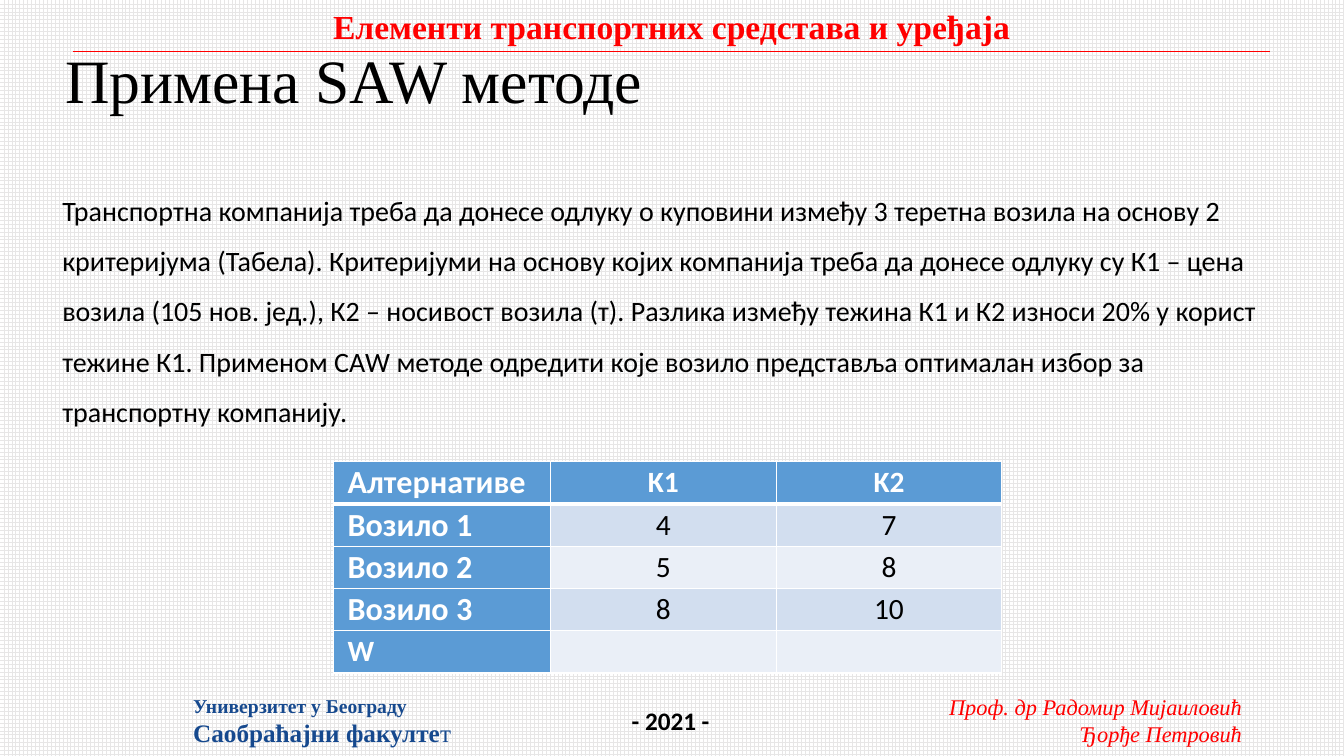
from dataclasses import dataclass

from lxml import etree
from pptx import Presentation
from pptx import util as u
from pptx.dml import color
from pptx.enum import dml, shapes, text
from pptx.oxml import ns

Cm = u.Cm
Align = text.PP_ALIGN


@dataclass(frozen=True)
class Theme:
    """Colours, fonts and type sizes of the slide."""
    red: str = "FF0000"
    navy: str = "16498E"
    black: str = "000000"
    white: str = "FFFFFF"
    grid: str = "E7E6E6"
    header: str = "5B9BD5"
    bands: tuple = ("D2DEEF", "EAEFF7")
    serif: str = "Times New Roman"
    sans: str = "Calibri"
    title: int = 44
    course: int = 24
    label: int = 23
    value: int = 21
    body: int = 20
    footer: int = 18
    lecturer: int = 16
    university: int = 14


THEME = Theme()
PROBLEM = (
    "Транспортна компанија треба да донесе одлуку о куповини између 3 теретна возила на основу 2 "
    "критеријума (Табела). Критеријуми на основу којих компанија треба да донесе одлуку су К1 – цена "
    "возила (105 нов. јед.), К2 – носивост возила (т). Разлика између тежина К1 и К2 износи 20% у корист "
    "тежине К1. Применом САW методе одредити које возило представља оптималан избор за "
    "транспортну компанију."
)
ALTERNATIVES = [
    ("Алтернативе", "K1", "K2"),
    ("Возило 1", "4", "7"),
    ("Возило 2", "5", "8"),
    ("Возило 3", "8", "10"),
    ("W", "", ""),
]


def rgb(value):
    """Turn a hex string into a colour."""
    return color.RGBColor.from_string(value)


def write(paragraph, words, *, size, font=THEME.sans, ink=THEME.black, bold=False,
          italic=False, align=Align.LEFT, spacing=None):
    """Add one formatted run to a paragraph."""
    paragraph.alignment = align
    if spacing:
        paragraph.line_spacing = spacing
    run = paragraph.add_run()
    run.text = words
    run.font.size, run.font.name = u.Pt(size), font
    run.font.bold, run.font.italic = bold, italic
    run.font.color.rgb = rgb(ink)


def text_frame(slide, box, wrap=False):
    """Add a text box and return its frame."""
    frame = slide.shapes.add_textbox(*map(Cm, box)).text_frame
    frame.word_wrap = wrap
    frame.auto_size = text.MSO_AUTO_SIZE.NONE if wrap else text.MSO_AUTO_SIZE.SHAPE_TO_FIT_TEXT
    return frame


def draw_background(slide):
    """Cover the slide with a pale grid."""
    fill = slide.background.fill
    fill.patterned()
    fill.pattern = dml.MSO_PATTERN.LARGE_GRID
    fill.fore_color.rgb = rgb(THEME.grid)
    fill.back_color.rgb = rgb(THEME.white)


def draw_header(slide, box):
    """Place the course name over a thin rule."""
    left, top, width, height = box
    rule_y = Cm(top + height)
    rule = slide.shapes.add_connector(shapes.MSO_CONNECTOR.STRAIGHT,
                                      Cm(left), rule_y, Cm(left + width), rule_y)
    rule.line.color.rgb = rgb(THEME.red)
    rule.line.width = u.Pt(0.5)
    etree.SubElement(rule._element.spPr, ns.qn("a:effectLst"))
    course = text_frame(slide, (left + 6.22, top, 17.75, height))
    write(course.paragraphs[0], "Елементи транспортних средстава и уређаја", size=THEME.course,
          font=THEME.serif, ink=THEME.red, bold=True, align=Align.CENTER)


def draw_footer(slide, box):
    """Place faculty, year and lecturers in a row."""
    left, top, width, height = box
    lecturers = text_frame(slide, (left + width - 8.13, top, 8.13, height))
    for paragraph, name in ((lecturers.paragraphs[0], "Проф. др Радомир Мијаиловић"),
                            (lecturers.add_paragraph(), "Ђорђе Петровић")):
        write(paragraph, name, size=THEME.lecturer, font=THEME.serif, ink=THEME.red,
              italic=True, align=Align.RIGHT)
    year = text_frame(slide, (left + 11.05, top + 0.3, 2.49, 1.02))
    write(year.paragraphs[0], "- 2021 -", size=THEME.footer, bold=True)
    faculty = text_frame(slide, (left, top, 7.09, height))
    school = {"font": THEME.serif, "ink": THEME.navy}
    write(faculty.paragraphs[0], "Универзитет у Београду", size=THEME.university, bold=True, **school)
    department = faculty.add_paragraph()
    write(department, "Саобраћајни факулте", size=THEME.footer, bold=True, **school)
    write(department, "т", size=THEME.footer, **school)


def draw_passage(slide, box, words, **style):
    """Place one wrapped paragraph in its box."""
    write(text_frame(slide, box, wrap=True).paragraphs[0], words, **style)


def set_borders(cell, row):
    """Draw white cell edges, thick beneath the header row."""
    widths = {"lnL": 1, "lnR": 1, "lnT": 3 if row == 1 else 1, "lnB": 3 if row == 0 else 1}
    properties = cell._tc.get_or_add_tcPr()
    for place, (side, width) in enumerate(widths.items()):
        edge = etree.Element(ns.qn(f"a:{side}"), w=str(u.Pt(width)))
        fill = etree.SubElement(edge, ns.qn("a:solidFill"))
        etree.SubElement(fill, ns.qn("a:srgbClr"), val=THEME.white)
        properties.insert(place, edge)


def set_hanging_indent(paragraph, indent):
    """Hang the first line and put a tab stop at the indent."""
    properties = paragraph._p.get_or_add_pPr()
    properties.set("marL", str(indent))
    properties.set("indent", str(-indent))
    tabs = etree.SubElement(properties, ns.qn("a:tabLst"))
    etree.SubElement(tabs, ns.qn("a:tab"), pos=str(indent), algn="l")


def draw_alternatives(slide, box, rows):
    """Build the table of vehicles and criteria."""
    left, top, width, height = box
    label_width = 5.46
    table = slide.shapes.add_table(len(rows), len(rows[0]), *map(Cm, box)).table
    for col, column in enumerate(table.columns):
        column.width = Cm((width - label_width) / 2 if col else label_width)
    for row, entries in enumerate(rows):
        table.rows[row].height = Cm(height / len(rows))
        for col, entry in enumerate(entries):
            cell = table.cell(row, col)
            heading = row == 0 or col == 0
            cell.fill.solid()
            cell.fill.fore_color.rgb = rgb(THEME.header if heading else THEME.bands[(row - 1) % 2])
            set_borders(cell, row)
            cell.vertical_anchor = text.MSO_ANCHOR.MIDDLE
            cell.margin_top = cell.margin_bottom = 0
            cell.margin_left = cell.margin_right = Cm(0.33 if col else 0.35)
            if entry:
                paragraph = cell.text_frame.paragraphs[0]
                set_hanging_indent(paragraph, Cm(0.76))
                write(paragraph, entry,
                      size=THEME.value if col or entry == "W" else THEME.label,
                      ink=THEME.white if heading else THEME.black, bold=heading,
                      align=Align.CENTER if col else Align.LEFT)


def main():
    """Build and save the slide."""
    deck = Presentation()
    deck.slide_width, deck.slide_height = Cm(33.87), Cm(19.05)
    slide = deck.slides.add_slide(deck.slide_layouts[6])
    draw_background(slide)
    draw_header(slide, (1.83, 0.03, 30.18, 1.27))
    draw_footer(slide, (4.62, 17.35, 26.93, 1.63))
    draw_passage(slide, (1.32, 4.32, 31.01, 6.53), PROBLEM, size=THEME.body, spacing=1.5)
    draw_alternatives(slide, (8.41, 11.63, 16.84, 5.33), ALTERNATIVES)
    draw_passage(slide, (1.4, 1.14, 29.21, 3.68), "Примена SAW методе",
                 size=THEME.title, font=THEME.serif, spacing=0.9)
    deck.save("out.pptx")


if __name__ == "__main__":
    main()
